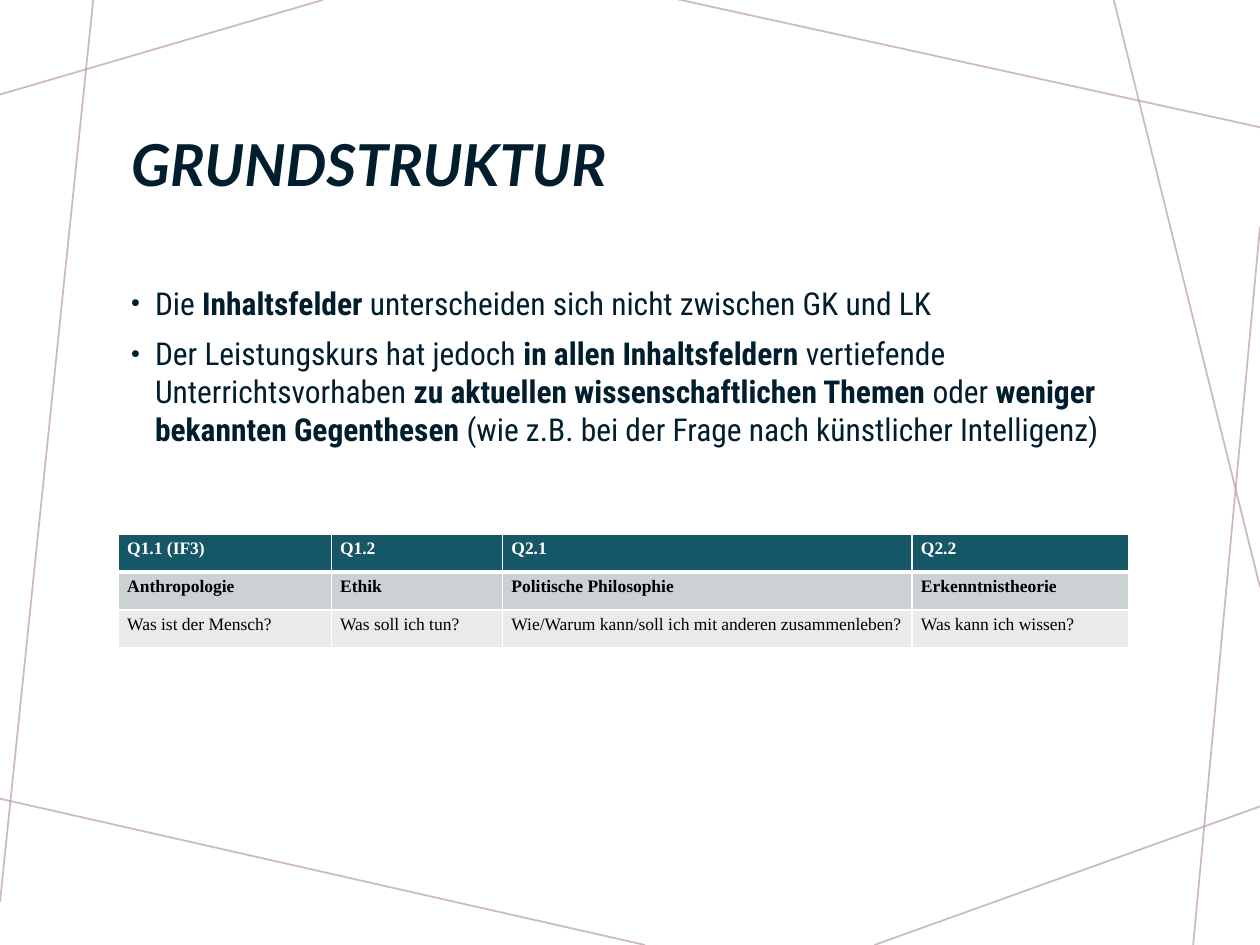
from lxml import etree
from pptx import Presentation
from pptx.dml.color import RGBColor
from pptx.enum.shapes import MSO_CONNECTOR
from pptx.enum.text import MSO_ANCHOR, MSO_AUTO_SIZE, PP_ALIGN
from pptx.oxml.ns import qn
from pptx.util import Inches, Pt

STRAIGHT = MSO_CONNECTOR.STRAIGHT
MIDDLE, TOP = MSO_ANCHOR.MIDDLE, MSO_ANCHOR.TOP
NO_AUTOFIT = MSO_AUTO_SIZE.NONE
LEFT = PP_ALIGN.LEFT

NAVY, TEAL, MAUVE, WHITE, BLACK = "001E2E", "155767", "BA9CA0", "FFFFFF", "000000"

RAYS = [
    ((2.56, 0), (0, 0.75)),
    ((0.74, 0), (0, 7.16)),
    ((5.12, 7.5), (-0.04, 6.33)),
    ((10, 6.4), (6.94, 7.5)),
    ((10, 1.8), (9.47, 7.5)),
    ((10, 4.66), (8.84, 0)),
    ((10, 1.01), (5.36, -0.01)),
]

POINTS = [
    [("Die ", False), ("Inhaltsfelder", True),
     (" unterscheiden sich nicht zwischen GK und LK", False)],
    [("Der Leistungskurs hat jedoch ", False), ("in allen Inhaltsfeldern", True),
     (" vertiefende Unterrichtsvorhaben ", False),
     ("zu aktuellen wissenschaftlichen Themen", True), (" oder ", False),
     ("weniger bekannten Gegenthesen ", True),
     ("(wie z.B. bei der Frage nach künstlicher Intelligenz)", False)],
]

COURSE_PLAN = [
    ["Q1.1 (IF3)", "Q1.2", "Q2.1", "Q2.2"],
    ["Anthropologie", "Ethik", "Politische Philosophie", "Erkenntnistheorie"],
    ["Was ist der Mensch?", "Was soll ich tun?",
     "Wie/Warum kann/soll ich mit anderen zusammenleben?", "Was kann ich wissen?"],
]
ROW_STYLES = [
    {"fill": TEAL, "color": WHITE, "bold": True, "top": 1, "bottom": 3},
    {"fill": "CCD1D3", "color": BLACK, "bold": True, "top": 3, "bottom": 1},
    {"fill": "E8EAEB", "color": BLACK, "bold": False, "top": 1, "bottom": 1},
]


def rgb(value):
    return RGBColor.from_string(value)


class SlideBuilder:
    title_font = {"name": "Lato", "size": Pt(33), "bold": True, "italic": True}
    body_font = {"name": "Roboto Condensed", "size": Pt(18)}
    table_font = {"name": "Times New Roman", "size": Pt(10)}
    cell_format = {"margin_left": Inches(0.07), "margin_right": Inches(0.07),
                   "margin_top": Inches(0.04), "margin_bottom": Inches(0.04)}

    def __init__(self, slide):
        self.slide = slide

    def apply(self, target, values):
        for name, value in values.items():
            setattr(target, name, value)

    def style_font(self, font, values, color):
        self.apply(font, values)
        font.color.rgb = rgb(color)

    def ray(self, start, end):
        line = self.slide.shapes.add_connector(
            STRAIGHT, *(Inches(value) for value in start + end))
        line.line.width = Pt(1)
        line.line.color.rgb = rgb(MAUVE)
        properties = line.element.spPr
        color = properties.find(".//" + qn("a:srgbClr"))
        etree.SubElement(color, qn("a:alpha"), val="70000")
        etree.SubElement(properties, qn("a:effectLst"))

    def place(self, placeholder, left, top, width, height, anchor):
        self.apply(placeholder, {"left": Inches(left), "top": Inches(top),
                                 "width": Inches(width), "height": Inches(height)})
        self.apply(placeholder.text_frame, {"word_wrap": True, "auto_size": NO_AUTOFIT,
                                            "vertical_anchor": anchor})
        placeholder.element.getparent().append(placeholder.element)
        return placeholder.text_frame

    def title(self, text, *box):
        frame = self.place(self.slide.shapes.title, *box, MIDDLE)
        frame.text = text
        heading = frame.paragraphs[0]
        self.apply(heading, {"alignment": LEFT, "line_spacing": 0.9})
        self.style_font(heading.runs[0].font, self.title_font, NAVY)

    def bullets(self, points, *box):
        frame = self.place(self.slide.placeholders[1], *box, TOP)
        for index, parts in enumerate(points):
            point = frame.add_paragraph() if index else frame.paragraphs[0]
            properties = point._p.get_or_add_pPr()
            properties.set("marL", str(Inches(0.19)))
            properties.set("indent", str(Inches(-0.19)))
            etree.SubElement(properties, qn("a:buSzPct"), val="80000")
            etree.SubElement(properties, qn("a:buFont"), typeface="Arial")
            etree.SubElement(properties, qn("a:buChar"), char="•")
            point.space_before = Pt(7.5 if index else 0)
            for text, bold in parts:
                run = point.add_run()
                run.text = text
                self.style_font(run.font, {**self.body_font, "bold": bold}, NAVY)

    def border(self, cell, side, width):
        edge = etree.SubElement(cell._tc.get_or_add_tcPr(), qn("a:ln" + side),
                                w=str(Pt(width)))
        fill = etree.SubElement(edge, qn("a:solidFill"))
        etree.SubElement(fill, qn("a:srgbClr"), val=WHITE)

    def cell(self, cell, text, style):
        self.apply(cell, self.cell_format)
        edges = {"L": 1, "R": 1, "T": style["top"], "B": style["bottom"]}
        for side, width in edges.items():
            self.border(cell, side, width)
        cell.fill.solid()
        cell.fill.fore_color.rgb = rgb(style["fill"])
        cell.text = text
        self.style_font(cell.text_frame.paragraphs[0].runs[0].font,
                        {**self.table_font, "bold": style["bold"]}, style["color"])

    def table(self, rows, styles, left, top, widths, row_height):
        table = self.slide.shapes.add_table(
            len(rows), len(widths), Inches(left), Inches(top),
            Inches(sum(widths)), Inches(row_height * len(rows))).table
        for column, width in zip(table.columns, widths):
            column.width = Inches(width)
        for row, texts, style in zip(table.rows, rows, styles):
            row.height = Inches(row_height)
            for cell, text in zip(row.cells, texts):
                self.cell(cell, text, style)


def main():
    deck = Presentation()
    deck.slide_width, deck.slide_height = Inches(10), Inches(7.5)
    builder = SlideBuilder(deck.slides.add_slide(deck.slide_layouts[1]))
    for start, end in RAYS:
        builder.ray(start, end)
    builder.title("GRUNDSTRUKTUR", 0.94, 0.58, 8.12, 1.51)
    builder.bullets(POINTS, 0.94, 2.2, 8.12, 4.4)
    builder.table(COURSE_PLAN, ROW_STYLES, 0.94, 4.24, [1.69, 1.36, 3.25, 1.72], 0.3)
    deck.save("out.pptx")


if __name__ == "__main__":
    main()
